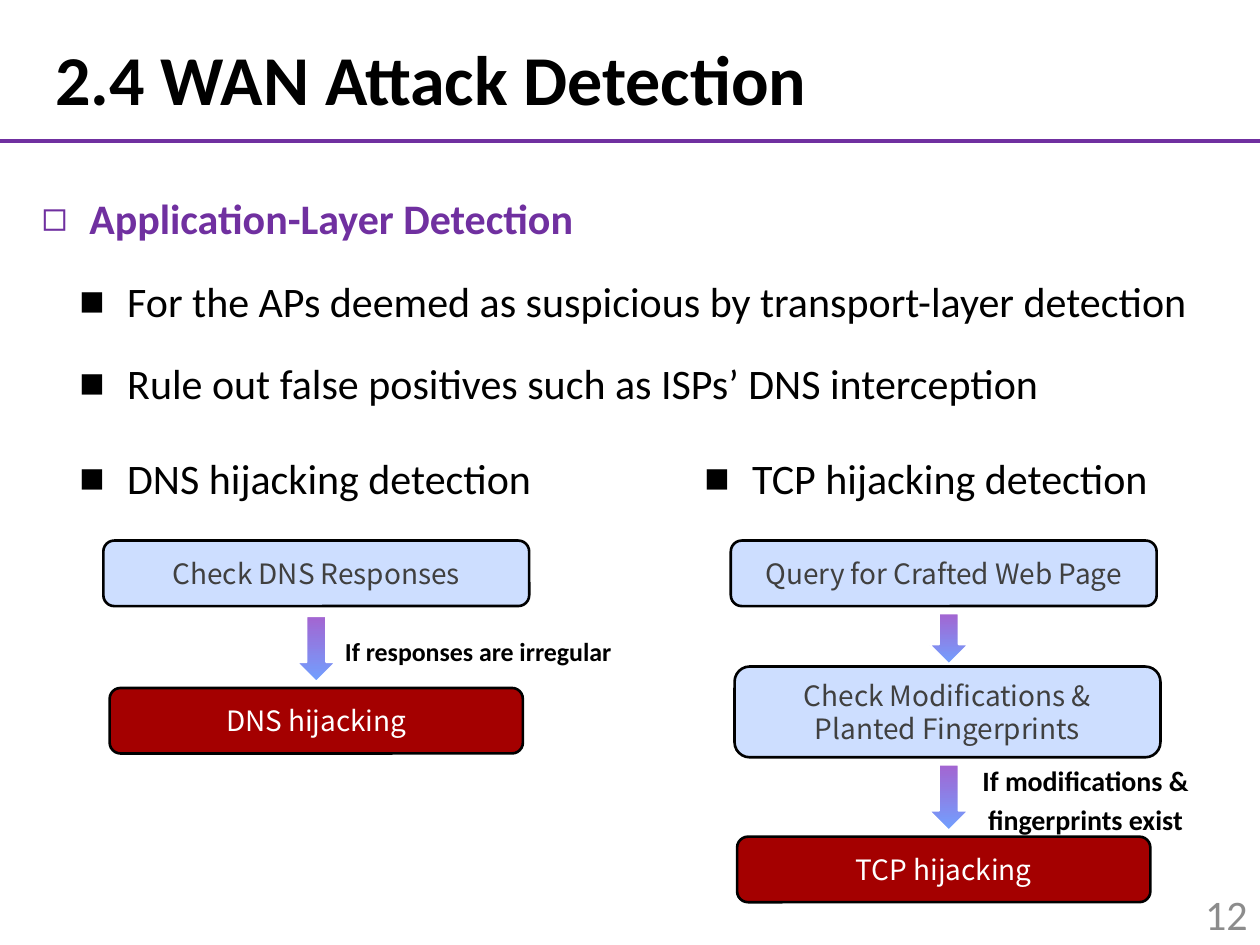
from lxml.etree import SubElement
from pptx import Presentation
from pptx.dml.color import RGBColor
from pptx.enum.shapes import MSO_CONNECTOR, MSO_SHAPE
from pptx.enum.text import MSO_ANCHOR, MSO_AUTO_SIZE, PP_ALIGN
from pptx.oxml.ns import qn
from pptx.util import Inches, Pt

COLORS = {
    "black": "000000", "white": "FFFFFF", "purple": "7030A0",
    "step": "CDDEFF", "step_text": "404040", "verdict": "A40000",
    "arrow_tip": "71A0FF", "arrow_tail": "A365D1", "number": "8C8C8C",
}
BODY_FONT = "Calibri"
BOX_FONT = "Noto Sans CJK SC"


def color(name):
    return RGBColor.from_string(COLORS[name])


def write(paragraph, text, size, color_name, font=BODY_FONT, bold=False):
    run = paragraph.add_run()
    run.text = text
    run.font.name = font
    run.font.size = Pt(size)
    run.font.bold = bold
    run.font.color.rgb = color(color_name)


def add_text(slide, box, inset=0):
    """Add a wrapping text box and return its first paragraph."""
    frame = slide.shapes.add_textbox(*map(Inches, box)).text_frame
    frame.word_wrap = True
    frame.margin_left = frame.margin_right = Inches(inset)
    frame.margin_top = frame.margin_bottom = Inches(inset / 2)
    return frame.paragraphs[0]


def add_bullet(slide, box, text, mark="■", color_name="black", bold=False):
    paragraph = add_text(slide, box)
    paragraph.line_spacing = 1.25
    properties = paragraph._p.get_or_add_pPr()
    properties.set("marL", str(Inches(0.38)))
    properties.set("indent", str(-Inches(0.38)))
    SubElement(properties, qn("a:buFont")).set("typeface", "Arial")
    SubElement(properties, qn("a:buChar")).set("char", mark)
    write(paragraph, text, 24, color_name, bold=bold)


def add_box(slide, box, text, fill, text_color):
    shape = slide.shapes.add_shape(MSO_SHAPE.ROUNDED_RECTANGLE, *map(Inches, box))
    shape.shadow.inherit = False
    shape.fill.solid()
    shape.fill.fore_color.rgb = color(fill)
    shape.line.color.rgb = color("black")
    shape.line.width = Pt(1.5)
    frame = shape.text_frame
    frame.word_wrap = True
    frame.vertical_anchor = MSO_ANCHOR.MIDDLE
    paragraph = frame.paragraphs[0]
    paragraph.alignment = PP_ALIGN.CENTER
    write(paragraph, text, 16, text_color, BOX_FONT)


def add_down_arrow(slide, center_x, center_y, length):
    """Right arrow turned downwards about its centre."""
    width = 0.31
    shape = slide.shapes.add_shape(
        MSO_SHAPE.RIGHT_ARROW, Inches(center_x - length / 2),
        Inches(center_y - width / 2), Inches(length), Inches(width))
    shape.rotation = 90
    shape.shadow.inherit = False
    shape.fill.gradient()
    shape.fill.gradient_angle = 180
    for stop, name, position in zip(
            shape.fill.gradient_stops, ("arrow_tip", "arrow_tail"), (0, 1)):
        stop.color.rgb = color(name)
        stop.position = position
    shape.line.color.rgb = color("white")
    shape.line.width = Pt(1)


def add_condition(slide, box, text, size, spacing):
    paragraph = add_text(slide, box)
    paragraph.alignment = PP_ALIGN.CENTER
    paragraph.line_spacing = spacing
    write(paragraph, text, size, "black", bold=True)


def add_header(slide, box, text):
    title = slide.shapes.title
    title.left, title.top, title.width, title.height = map(Inches, box)
    frame = title.text_frame
    frame.auto_size = MSO_AUTO_SIZE.NONE
    frame.vertical_anchor = MSO_ANCHOR.MIDDLE
    paragraph = frame.paragraphs[0]
    paragraph.alignment = PP_ALIGN.LEFT
    paragraph.line_spacing = 0.9
    write(paragraph, text, 40, "black", bold=True)

    rule_y = Inches(box[1] + 0.76)
    rule = slide.shapes.add_connector(
        MSO_CONNECTOR.STRAIGHT, Inches(-0.04), rule_y, Inches(10.04), rule_y)
    rule.line.color.rgb = color("purple")
    rule.line.width = Pt(2.75)
    SubElement(rule._element.spPr, qn("a:effectLst"))


def add_points(slide, left, top, width):
    add_bullet(slide, (left, top, 9.06, 0.52), "Application-Layer Detection",
               "◻", "purple", True)
    points = ("For the APs deemed as suspicious by transport-layer detection",
              "Rule out false positives such as ISPs’ DNS interception")
    for index, text in enumerate(points):
        add_bullet(slide, (left + 0.3, top + 0.66 + 0.65 * index, width, 0.52), text)


def add_dns_column(slide, left, top):
    add_bullet(slide, (left, top, 3.8, 0.52), "DNS hijacking detection")
    add_box(slide, (left + 0.19, top + 0.8, 3.38, 0.52),
            "Check DNS Responses", "step", "step_text")
    add_down_arrow(slide, left + 1.88, top + 1.66, 0.52)
    add_condition(slide, (left + 2.04, top + 1.49, 2.25, 0.4),
                  "If responses are irregular", 14.8, 1.25)
    add_box(slide, (left + 0.24, top + 1.97, 3.28, 0.52),
            "DNS hijacking", "verdict", "white")


def add_tcp_column(slide, left, top):
    add_bullet(slide, (left, top, 3.8, 0.52), "TCP hijacking detection")
    add_box(slide, (left + 0.21, top + 0.8, 3.38, 0.52),
            "Query for Crafted Web Page", "step", "step_text")
    add_down_arrow(slide, left + 1.94, top + 1.58, 0.4)
    add_box(slide, (left + 0.24, top + 1.8, 3.38, 0.72),
            "Check Modifications & Planted Fingerprints", "step", "step_text")
    add_down_arrow(slide, left + 1.94, top + 2.84, 0.52)
    add_box(slide, (left + 0.26, top + 3.15, 3.28, 0.52),
            "TCP hijacking", "verdict", "white")
    add_condition(slide, (left + 1.9, top + 2.53, 2.25, 0.62),
                  "If modifications & fingerprints exist", 16, 1.15)


def add_page_number(slide, box, number):
    paragraph = add_text(slide, box, inset=0.1)
    paragraph.alignment = PP_ALIGN.RIGHT
    write(paragraph, number, 24, "number")


def main():
    presentation = Presentation()
    presentation.slide_width = Inches(10)
    presentation.slide_height = Inches(7.5)
    slide = presentation.slides.add_slide(presentation.slide_layouts[5])

    add_header(slide, (0.34, 0.36, 9.6, 0.6), "2.4 WAN Attack Detection")
    add_points(slide, 0.33, 1.43, 9.32)
    add_dns_column(slide, 0.63, 3.49)
    add_tcp_column(slide, 5.59, 3.49)
    add_page_number(slide, (7.75, 7.0, 2.25, 0.4), "12")

    presentation.save("out.pptx")


if __name__ == "__main__":
    main()
